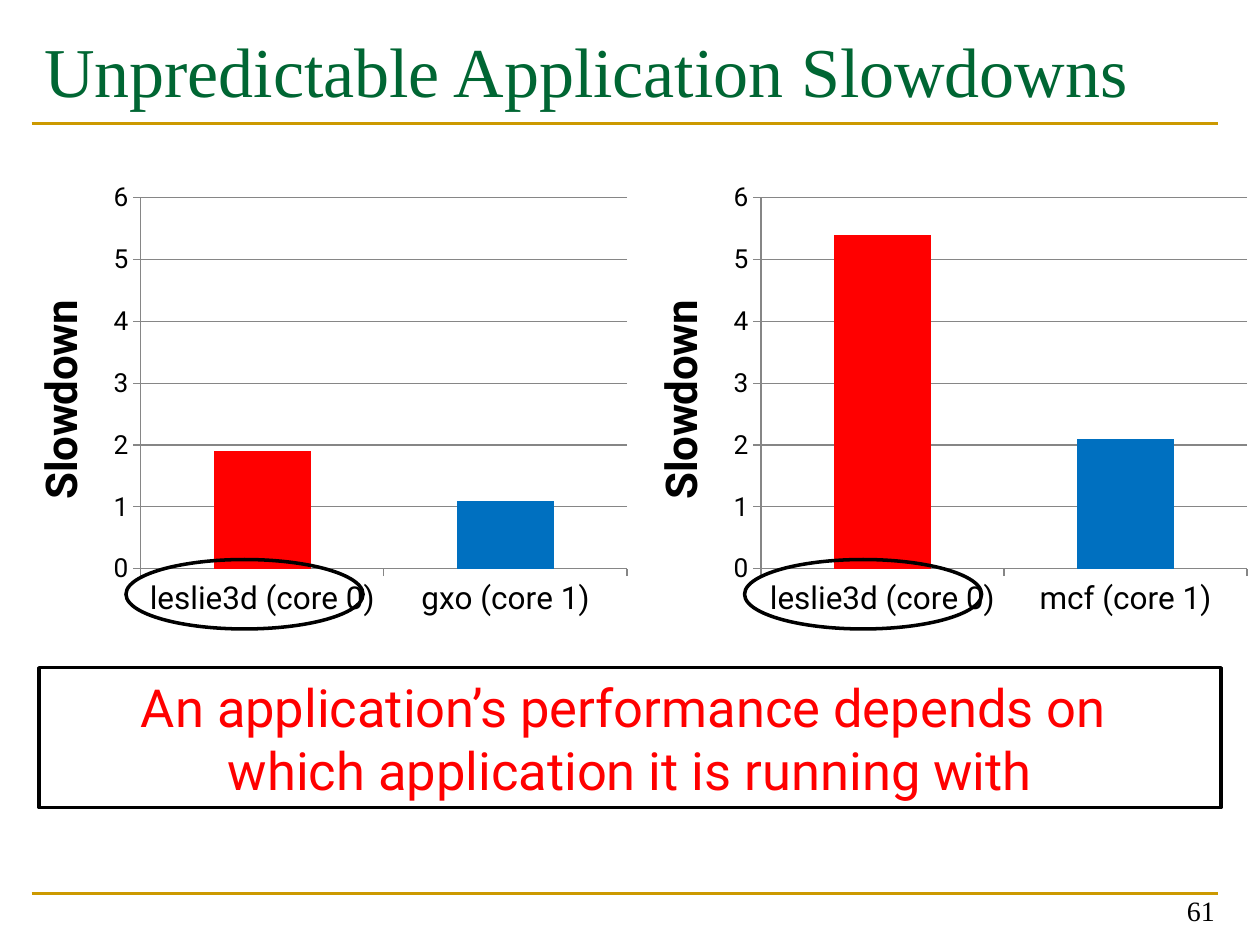
from lxml import etree
from pptx import Presentation, util as u
from pptx.chart.data import CategoryChartData
from pptx.dml.color import RGBColor
from pptx.enum import chart as ch, shapes, text
from pptx.oxml import parse_xml
from pptx.oxml.ns import nsdecls, qn

# Content
TITLE = "Unpredictable Application Slowdowns"
MESSAGE = ["An application’s performance depends on ",
           "which application it is running with"]
PAGE = "61"
CHARTS = [  # left edge, ellipse left edge, categories, values
    (0, 2.54, ["leslie3d (core 0)", "gxo (core 1)"], [1.9, 1.1]),
    (12.5, 15.01, ["leslie3d (core 0)", "mcf (core 1)"], [5.4, 2.1]),
]
BAR_COLORS = ["FF0000", "0070C0"]
RULES_Y = [18.01, 2.49]
PLOT = {"x": 0.22, "y": 0.05, "w": 0.76, "h": 0.82}  # shares of the chart frame
SANS, SERIF = "Roboto", "Times New Roman"
GRAY = "868686"


def rgb(value):
    return RGBColor.from_string(value)


def set_font(font, name, size, color="000000", bold=False):
    font.name, font.size, font.bold = name, u.Pt(size), bold
    font.color.rgb = rgb(color)


def set_line(line, color, width):
    line.color.rgb, line.width = rgb(color), u.Pt(width)


def write(sp, lines, align, anchor, name, size, color):
    tf = sp.text_frame
    tf.word_wrap, tf.vertical_anchor = True, anchor
    tf.text = "\n".join(lines)
    for p in tf.paragraphs:
        p.alignment = align
        set_font(p.font, name, size, color)


def add_text(box, *args):
    write(s.shapes.add_textbox(*map(u.Cm, box)), *args)


def add_outline(kind, *box):
    sp = s.shapes.add_shape(kind, *map(u.Cm, box))
    sp.shadow.inherit = False
    sp.fill.background()
    set_line(sp.line, "000000", 2)
    return sp


def add_rule(y):
    line = s.shapes.add_connector(shapes.MSO_CONNECTOR.STRAIGHT,
                                  *map(u.Cm, (0.64, y, 24.56, y)))
    set_line(line.line, "CC9900", 1.5)
    etree.SubElement(line._element.spPr, qn("a:effectLst"))


def fix_plot_area(chart):
    area = chart._chartSpace.chart.plotArea
    for old in area.findall(qn("c:layout")):
        area.remove(old)
    parts = "".join(f'<c:{k} val="{v}"/>' for k, v in PLOT.items())
    area.insert(0, parse_xml(
        f'<c:layout {nsdecls("c")}><c:manualLayout><c:layoutTarget val="inner"/>'
        f'<c:xMode val="edge"/><c:yMode val="edge"/>{parts}'
        '</c:manualLayout></c:layout>'))


def add_chart(left, cats, vals):
    data = CategoryChartData()
    data.categories = cats
    data.add_series("Series 1", vals)
    chart = s.shapes.add_chart(ch.XL_CHART_TYPE.COLUMN_CLUSTERED,
                               *map(u.Cm, (left, 3.53, 12.9, 9.12)), data).chart
    set_font(chart.font, SANS, 10)
    chart.has_legend = chart.has_title = False
    fix_plot_area(chart)
    # Bars
    plot = chart.plots[0]
    plot.gap_width, plot.vary_by_categories = 150, False
    for i, color in enumerate(BAR_COLORS):
        fill = plot.series[0].points[i].format.fill
        fill.solid()
        fill.fore_color.rgb = rgb(color)
    # Axes
    val = chart.value_axis
    for axis, size in ((chart.category_axis, 18), (val, 15)):
        set_font(axis.tick_labels.font, SANS, size)
        axis.major_tick_mark = ch.XL_TICK_MARK.OUTSIDE
        set_line(axis.format.line, GRAY, 0.75)
    val.minimum_scale, val.maximum_scale, val.major_unit = 0, 6, 1
    val.has_major_gridlines = True
    set_line(val.major_gridlines.format.line, GRAY, 0.75)
    tf = val.axis_title.text_frame
    tf.text = "Slowdown"
    set_font(tf.paragraphs[0].font, SANS, 25, bold=True)


prs = Presentation()
prs.slide_width, prs.slide_height = u.Cm(25.4), u.Cm(19.05)
s = prs.slides.add_slide(prs.slide_layouts[6])

# Rules, title and page number
for y in RULES_Y:
    add_rule(y)
ALIGN, ANCHOR = text.PP_ALIGN, text.MSO_ANCHOR
add_text((0.64, 0.43, 23.93, 2.97), [TITLE], ALIGN.LEFT, ANCHOR.TOP,
         SERIF, 40, "006633")
add_text((18.82, 17.55, 5.92, 1.27), [PAGE], ALIGN.RIGHT, ANCHOR.BOTTOM,
         SERIF, 16, "000000")

# Charts, then the ellipses around their first labels
for left, _, cats, vals in CHARTS:
    add_chart(left, cats, vals)
for _, left, _, _ in CHARTS:
    add_outline(shapes.MSO_SHAPE.OVAL, left, 11.28, 4.78, 1.4)

# Message
box = add_outline(shapes.MSO_SHAPE.RECTANGLE, 0.79, 13.46, 23.83, 2.82)
write(box, MESSAGE, ALIGN.CENTER, ANCHOR.MIDDLE, SANS, 30, "FF0000")

prs.save("out.pptx")
